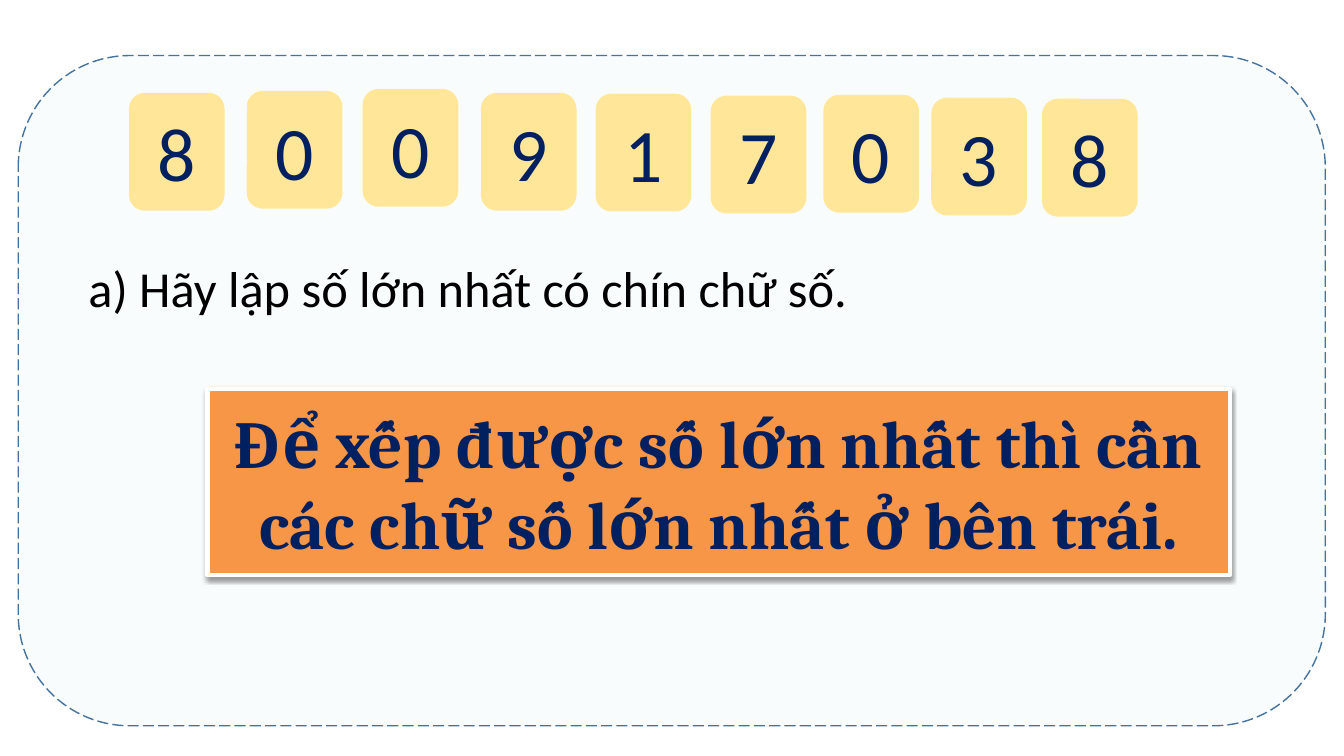
from lxml.etree import SubElement
from pptx import Presentation
from pptx.dml.color import RGBColor
from pptx.enum.dml import MSO_LINE_DASH_STYLE as Dash
from pptx.enum.shapes import MSO_SHAPE as Shape
from pptx.enum.text import MSO_ANCHOR as Anchor, MSO_AUTO_SIZE as AutoSize, PP_ALIGN as Align
from pptx.oxml.ns import qn
from pptx.util import Cm, Pt

PANEL_FILL = RGBColor(0xF8, 0xFC, 0xFD)
PANEL_LINE = RGBColor(0x43, 0x73, 0x9E)
CARD_FILL = RGBColor(0xFF, 0xE6, 0x99)
BANNER_FILL = RGBColor(0xF7, 0x96, 0x46)
NAVY = RGBColor(0x00, 0x20, 0x60)
BLACK = RGBColor(0x00, 0x00, 0x00)
WHITE = RGBColor(0xFF, 0xFF, 0xFF)

CARD_WIDTH, CARD_HEIGHT = 2.41, 2.97
CARDS = [
    ("8", 3.25, 2.34), ("0", 6.22, 2.29), ("0", 9.14, 2.24),
    ("9", 12.12, 2.34), ("1", 15.01, 2.36), ("7", 17.91, 2.41),
    ("0", 20.75, 2.39), ("3", 23.47, 2.46), ("8", 26.26, 2.49),
]
QUESTION = "a) Hãy lập số lớn nhất có chín chữ số."
HINT = "Để xếp được số lớn nhất thì cần các chữ số lớn nhất ở bên trái."

DIGIT_FORMAT = {"name": "Calibri", "size": Pt(54)}
QUESTION_FORMAT = {"name": "Calibri", "size": Pt(36)}
HINT_FORMAT = {"name": "Cambria", "size": Pt(48), "bold": True}


def set_format(target, values):
    for name, value in values.items():
        setattr(target, name, value)


def add_box(page, kind, place, fill, line=None):
    box = page.shapes.add_shape(kind, *map(Cm, place))
    box.shadow.inherit = False
    box.fill.solid()
    box.fill.fore_color.rgb = fill
    if line is None:
        box.line.fill.background()
    else:
        color, values = line
        box.line.color.rgb = color
        set_format(box.line, values)
    return box


def write(box, text, values, color, align):
    set_format(box.text_frame, {"word_wrap": True, "vertical_anchor": Anchor.MIDDLE})
    para = box.text_frame.paragraphs[0]
    para.alignment = align
    span = para.add_run()
    span.text = text
    set_format(span.font, values)
    span.font.color.rgb = color


def add_shadow(box):
    effects = box.element.spPr.find(qn("a:effectLst"))
    shadow = SubElement(effects, qn("a:outerShdw"), blurRad="40000",
                        dist="20000", dir="5400000", rotWithShape="0")
    color = SubElement(shadow, qn("a:srgbClr"), val=str(BLACK))
    SubElement(color, qn("a:alpha"), val="38000")


def add_card(page, digit, left, top):
    place = (left, top, CARD_WIDTH, CARD_HEIGHT)
    card = add_box(page, Shape.ROUNDED_RECTANGLE, place, CARD_FILL)
    write(card, digit, DIGIT_FORMAT, NAVY, Align.CENTER)


def add_question(page):
    box = page.shapes.add_textbox(Cm(1.98), Cm(6.35), Cm(27.86), Cm(1.8))
    write(box, QUESTION, QUESTION_FORMAT, BLACK, Align.JUSTIFY)
    set_format(box.text_frame, {"vertical_anchor": Anchor.TOP,
                                "auto_size": AutoSize.SHAPE_TO_FIT_TEXT})


def add_banner(page):
    banner = add_box(page, Shape.RECTANGLE, (5.23, 9.8, 25.76, 4.7),
                     BANNER_FILL, (WHITE, {"width": Pt(3)}))
    add_shadow(banner)
    write(banner, HINT, HINT_FORMAT, NAVY, Align.CENTER)


def main():
    deck = Presentation()
    set_format(deck, {"slide_width": Cm(33.87), "slide_height": Cm(19.05)})
    page = deck.slides.add_slide(deck.slide_layouts[6])
    add_box(page, Shape.ROUNDED_RECTANGLE, (0.46, 1.4, 32.94, 16.89), PANEL_FILL,
            (PANEL_LINE, {"width": Pt(1), "dash_style": Dash.LONG_DASH}))
    for digit, left, top in CARDS:
        add_card(page, digit, left, top)
    add_question(page)
    add_banner(page)
    deck.save("out.pptx")


if __name__ == "__main__":
    main()
